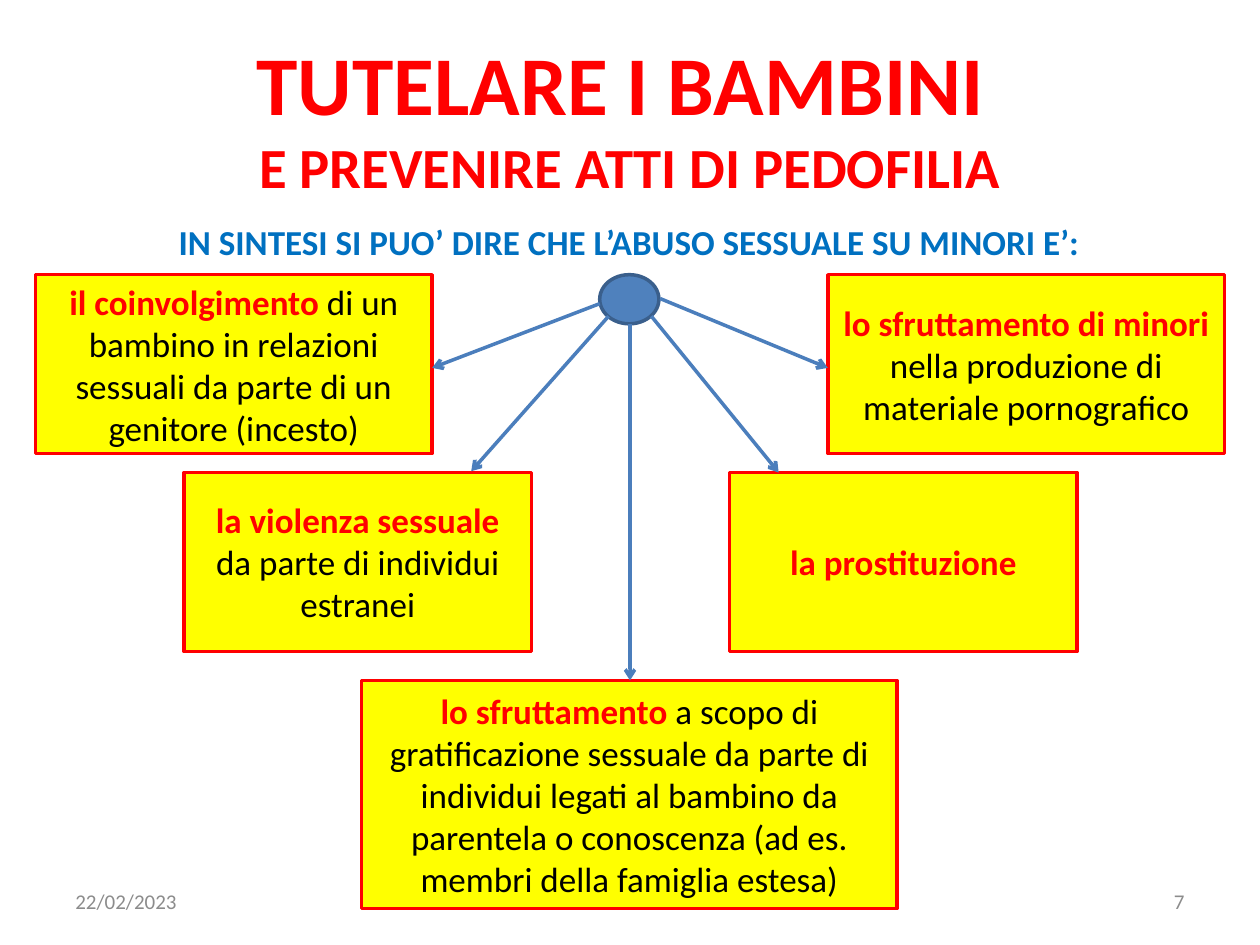
"""Build a slide that lists five forms of abuse around a central node."""
import pptx
import pptx.util
import pptx.dml.color
import pptx.enum.shapes
import pptx.enum.text
import pptx.oxml
import pptx.oxml.ns

Inches, Pt = pptx.util.Inches, pptx.util.Pt
SHAPE = pptx.enum.shapes.MSO_SHAPE
ALIGN = pptx.enum.text.PP_ALIGN
ANCHOR = pptx.enum.text.MSO_ANCHOR

COLORS = {
    "red": "FF0000", "yellow": "FFFF00", "black": "000000", "blue": "0070C0",
    "gray": "8C8C8C", "node": "4F81BD", "node_line": "3A5F8C", "arrow": "4B7EBC",
}
TITLE = [("TUTELARE I BAMBINI ", 47.7), ("E PREVENIRE ATTI DI PEDOFILIA", 32.4)]
LABELS = [
    ("IN SINTESI SI PUO’ DIRE CHE L’ABUSO SESSUALE SU MINORI E’:",
     (1.06, 1.7, 7.87, 0.44), 20, "blue", True, ALIGN.CENTER),
    ("22/02/2023", (0.5, 6.95, 2.33, 0.4), 12, "gray", False, ALIGN.LEFT),
    ("7", (7.17, 6.95, 2.33, 0.4), 12, "gray", False, ALIGN.RIGHT),
]
BOXES = [
    ("il coinvolgimento ",
     "di un bambino in relazioni sessuali da parte di un genitore (incesto)",
     (0.28, 2.18, 3.15, 1.42)),
    ("lo sfruttamento ",
     "a scopo di gratificazione sessuale da parte di individui legati al bambino "
     "da parentela o conoscenza (ad es. membri della famiglia estesa)",
     (2.87, 5.4, 4.25, 1.81)),
    ("la violenza sessuale ", "da parte di individui estranei", (1.46, 3.75, 2.76, 1.42)),
    ("la prostituzione", "", (5.79, 3.75, 2.76, 1.42)),
    ("lo sfruttamento di minori ", "nella produzione di materiale pornografico",
     (6.57, 2.18, 3.15, 1.42)),
]
NODE = (4.76, 2.18, 0.47, 0.39)
ARROWS = [
    ((4.76, 2.41), (3.43, 2.92)),
    ((4.83, 2.51), (3.74, 3.74)),
    ((5, 2.57), (5, 5.4)),
    ((5.17, 2.51), (6.18, 3.75)),
    ((5.24, 2.37), (6.57, 2.92)),
]


def rgb(name):
    return pptx.dml.color.RGBColor.from_string(COLORS[name])


def inches(values):
    return [Inches(v) for v in values]


def add_run(p, text, size, color, bold):
    r = p.add_run()
    r.text = text
    r.font.name = "Calibri"
    r.font.size = Pt(size)
    r.font.bold = bold
    r.font.color.rgb = rgb(color)


def set_frame(shape, align):
    tf = shape.text_frame
    tf.word_wrap = True
    tf.auto_size = pptx.enum.text.MSO_AUTO_SIZE.NONE
    tf.vertical_anchor = ANCHOR.MIDDLE
    p = tf.paragraphs[0]
    p.alignment = align
    return p


def add_title(s):
    title = s.shapes.title
    title.left, title.top, title.width, title.height = inches((0.75, 0.21, 8.5, 1.42))
    p = set_frame(title, ALIGN.CENTER)
    for i, (text, size) in enumerate(TITLE):
        if i:
            p.add_line_break()
        add_run(p, text, size, "red", True)


def add_shape(s, kind, place, fill, line):
    sp = s.shapes.add_shape(kind, *inches(place))
    sp.shadow.inherit = False
    sp.fill.solid()
    sp.fill.fore_color.rgb = rgb(fill)
    sp.line.color.rgb = rgb(line)
    sp.line.width = Pt(2)
    return sp


def add_arrow(s, start, end):
    line = s.shapes.add_connector(
        pptx.enum.shapes.MSO_CONNECTOR.STRAIGHT, *inches(start + end))
    line.line.color.rgb = rgb("arrow")
    line.line.width = Pt(2)
    ln = line.line._get_or_add_ln()
    pptx.oxml.xmlchemy.OxmlElement("a:tailEnd")
    tail = pptx.oxml.xmlchemy.OxmlElement("a:tailEnd")
    tail.set("type", "arrow")
    ln.append(tail)
    ln.getparent().append(pptx.oxml.xmlchemy.OxmlElement("a:effectLst"))


def main():
    prs = pptx.Presentation()
    prs.slide_width, prs.slide_height = inches((10, 7.5))
    s = prs.slides.add_slide(prs.slide_layouts[5])
    add_title(s)
    for text, place, size, color, bold, align in LABELS:
        p = set_frame(s.shapes.add_textbox(*inches(place)), align)
        add_run(p, text, size, color, bold)
    for lead, rest, place in BOXES:
        p = set_frame(add_shape(s, SHAPE.RECTANGLE, place, "yellow", "red"), ALIGN.CENTER)
        add_run(p, lead, 20, "red", True)
        if rest:
            add_run(p, rest, 20, "black", False)
    add_shape(s, SHAPE.OVAL, NODE, "node", "node_line")
    for start, end in ARROWS:
        add_arrow(s, start, end)
    prs.save("out.pptx")


if __name__ == "__main__":
    main()
